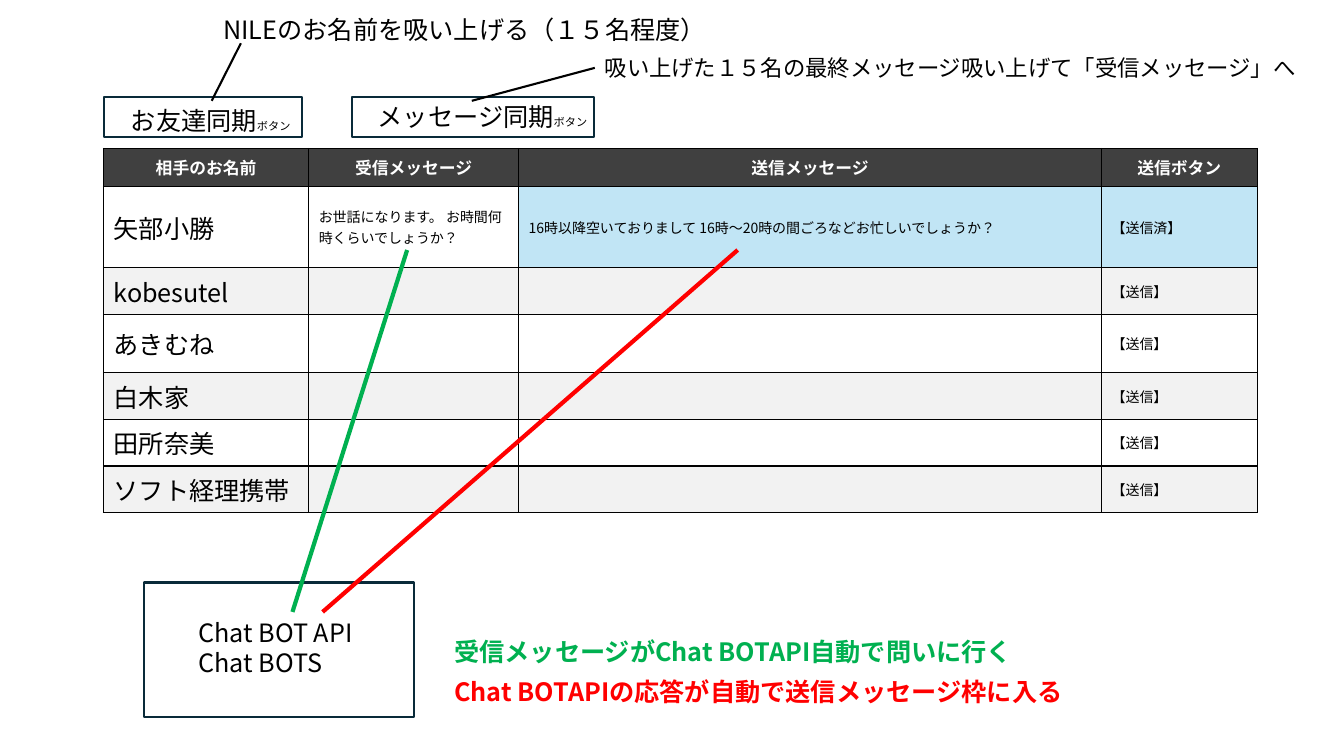
from lxml import etree
from pptx import Presentation
from pptx.dml.color import RGBColor as RGB
from pptx.enum.lang import MSO_LANGUAGE_ID as LANG
from pptx.enum.shapes import MSO_CONNECTOR as CONN, MSO_SHAPE as SHAPE
from pptx.enum.text import MSO_ANCHOR as ANCHOR, MSO_AUTO_SIZE as FIT, PP_ALIGN as ALIGN
from pptx.oxml import parse_xml
from pptx.oxml.ns import nsdecls, qn
from pptx.util import Cm, Pt

THEME = {
    "font": "Noto Sans CJK JP",
    "color": {
        "black": RGB.from_string("000000"), "white": RGB.from_string("FFFFFF"),
        "header": RGB.from_string("404040"), "band": RGB.from_string("F2F2F2"),
        "sent": RGB.from_string("C1E5F5"), "frame": RGB.from_string("092A39"),
        "green": RGB.from_string("00B050"), "red": RGB.from_string("FF0000"),
    },
    "size": {"main": Pt(18), "caption": Pt(16), "header": Pt(12), "message": Pt(10), "tag": Pt(8)},
}
COLOR = THEME["color"]


def write(p, text, size="main", color="black", bold=False):
    r = p.add_run()
    r.text = text
    r.font.color.rgb = COLOR[color]
    style = {"name": THEME["font"], "size": THEME["size"][size], "bold": bold,
             "language_id": LANG.JAPANESE}
    for name, value in style.items():
        setattr(r.font, name, value)
    etree.SubElement(r.font._element, qn("a:ea"), typeface=THEME["font"])


prs = Presentation()
prs.slide_width, prs.slide_height = Cm(33.87), Cm(19.05)
s = prs.slides.add_slide(prs.slide_layouts[6])

headers = ["相手のお名前", "受信メッセージ", "送信メッセージ", "送信ボタン"]
names = ["矢部小勝", "kobesutel", "あきむね", "白木家", "田所奈美", "ソフト経理携帯"]
rows = [headers] + [[name, "", "", "【送信】"] for name in names]
rows[1][1:] = [
    "お世話になります。 お時間何時くらいでしょうか？",
    "16時以降空いておりまして 16時〜20時の間ごろなどお忙しいでしょうか？",
    "【送信済】",
]
widths = [5.17, 5.29, 14.69, 3.92]
heights = [0.95, 2.06, 0.97, 1.47, 0.97, 0.97, 0.97]
table = s.shapes.add_table(
    len(rows), len(headers), Cm(2.61), Cm(3.74), Cm(sum(widths)), Cm(sum(heights))).table
for col, width in zip(table.columns, widths):
    col.width = Cm(width)
for i, (row, texts, height) in enumerate(zip(table.rows, rows, heights)):
    row.height = Cm(height)
    for j, (cell, text) in enumerate(zip(row.cells, texts)):
        for side in ("lnL", "lnR", "lnT", "lnB"):
            cell._tc.get_or_add_tcPr().append(parse_xml(
                f'<a:{side} {nsdecls("a")} w="12700"><a:solidFill>'
                f'<a:srgbClr val="{COLOR["black"]}"/></a:solidFill></a:{side}>'))
        fill = "header" if i == 0 else "sent" if i == 1 and j > 1 else "white" if i % 2 else "band"
        cell.fill.solid()
        cell.fill.fore_color.rgb = COLOR[fill]
        cell.vertical_anchor = ANCHOR.MIDDLE
        p = cell.text_frame.paragraphs[0]
        if i == 0:
            p.alignment = ALIGN.CENTER
            write(p, text, "header", "white", True)
        elif text:
            write(p, text, "message" if j else "main")

friend_frame = (2.62, 2.44, 5, 1.02)
message_frame = (8.88, 2.44, 6.1, 1.02)
chat_frame = (3.63, 14.68, 6.81, 3.38)
for box in (friend_frame, message_frame, chat_frame):
    sp = s.shapes.add_shape(SHAPE.RECTANGLE, *map(Cm, box))
    sp.shadow.inherit = False
    sp.fill.solid()
    sp.fill.fore_color.rgb = COLOR["white"]
    sp.line.color.rgb = COLOR["frame"]
    sp.line.width = Pt(1.5)

links = {
    "receive": ((10.26, 6.3, 7.37, 15.42), "green", 3),
    "send": ((18.59, 6.3, 8.13, 15.42), "red", 3),
    "friend": ((6.07, 1.09, 5.36, 2.54), "black", 1.5),
    "message": ((14.99, 1.7, 11.89, 2.54), "black", 1.5),
}
connectors = {}
for name, (ends, color, width) in links.items():
    line = s.shapes.add_connector(CONN.STRAIGHT, *map(Cm, ends))
    line.line.color.rgb = COLOR[color]
    line.line.width = Pt(width)
    etree.SubElement(line._element.spPr, qn("a:effectLst"))
    connectors[name] = line

labels = {
    "friend": ((3.05, 2.54, 4.57, 1.02), False, [[("お友達同期",), ("ボタン", "tag")]]),
    "message": ((9.27, 2.44, 5.87, 1.02), False, [[("メッセージ同期",), ("ボタン", "tag")]]),
    "chat": ((4.75, 15.42, 4.65, 1.8), False, [[("Chat BOT API",)], [("Chat BOTS",)]]),
    "friend_caption": ((5.38, 0.23, 12.95, 1.02), False,
                       [[("NILEのお名前を吸い上げる（１５名程度）",)]]),
    "message_caption": ((14.99, 1.24, 18.19, 0.94), False,
                        [[("吸い上げた１５名の最終メッセージ吸い上げて「受信メッセージ」へ", "caption")]]),
    "send_caption": ((11.2, 16.92, 20.02, 1.02), True,
                     [[("Chat BOTAPIの応答が自動で送信メッセージ枠に入る", "main", "red", True)]]),
    "receive_caption": ((11.2, 15.91, 16.94, 1.02), True,
                        [[("受信メッセージがChat BOTAPI自動で問いに行く", "main", "green", True)]]),
}
boxes = {}
for name, (box, wrap, paragraphs) in labels.items():
    sp = s.shapes.add_textbox(*map(Cm, box))
    tf = sp.text_frame
    for key, value in {"word_wrap": wrap, "auto_size": FIT.SHAPE_TO_FIT_TEXT}.items():
        setattr(tf, key, value)
    for k, runs in enumerate(paragraphs):
        p = tf.add_paragraph() if k else tf.paragraphs[0]
        for run in runs:
            write(p, *run)
    boxes[name] = sp

connectors["friend"].end_connect(boxes["friend"], 0)
connectors["message"].begin_connect(boxes["message_caption"], 1)

prs.save("out.pptx")
